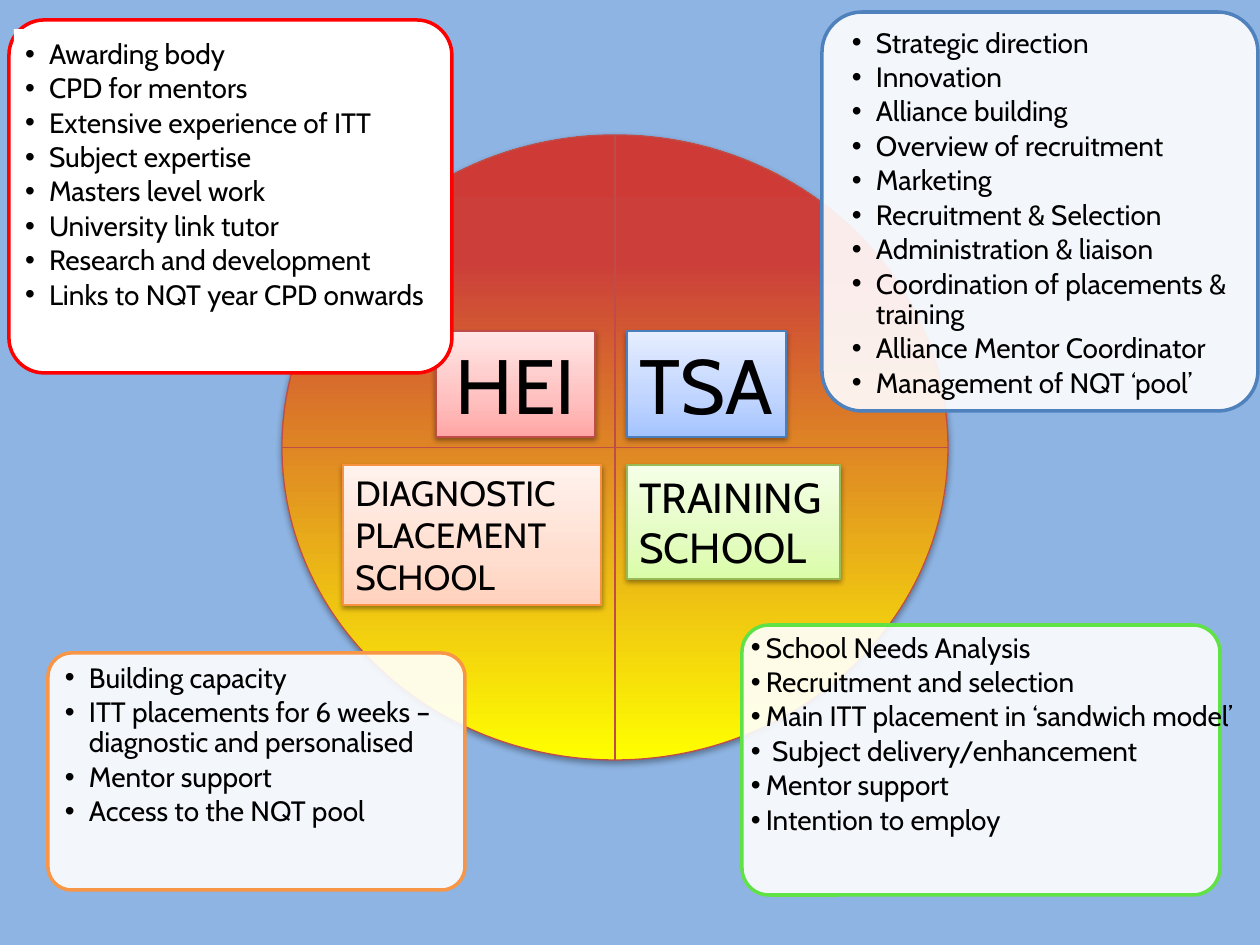
from dataclasses import dataclass

from lxml.etree import SubElement
from pptx import Presentation
from pptx.dml.color import RGBColor
from pptx.enum.shapes import MSO_SHAPE as Shape
from pptx.enum.text import MSO_ANCHOR, MSO_AUTO_SIZE, PP_ALIGN as Align
from pptx.oxml.ns import qn
from pptx.util import Emu, Pt

FONT = "Cabin"
SKY = RGBColor(0x8E, 0xB4, 0xE3)
WHITE = RGBColor(0xFF, 0xFF, 0xFF)
BLACK = RGBColor(0, 0, 0)
RED = RGBColor(0xFF, 0, 0)
BLUE = RGBColor(0x4F, 0x81, 0xBD)
GREEN = RGBColor(0x60, 0xE1, 0x46)
ORANGE = RGBColor(0xF7, 0x96, 0x46)
BRICK = RGBColor(0xBF, 0x4C, 0x48)
BLUE_EDGE = RGBColor(0x4B, 0x7E, 0xBC)
GREEN_EDGE = RGBColor(0x98, 0xB9, 0x55)
ORANGE_EDGE = RGBColor(0xF6, 0x92, 0x40)

# Gradient stops run from bottom to top
SUNSET = ((0, RGBColor(0xFF, 0xFF, 0)), (80, RGBColor(0xCB, 0x3E, 0x3A)),
          (100, RGBColor(0xCE, 0x3B, 0x37)))


def tint(*colours: str) -> tuple:
    return tuple(zip((0, 35, 100), map(RGBColor.from_string, colours)))


BLUE_TINT = tint("A4C4FF", "BFD4FF", "E6EEFF")
GREEN_TINT = tint("DAFDA7", "E4FCC2", "F5FFE7")
ORANGE_TINT = tint("FFD2BD", "FFDED0", "FFF2ED")
RED_TINT = tint("FFA6A5", "FFC0BF", "FFE7E7")


def px(n: int) -> Emu:
    return Emu(round(n * 914400 / 126))


@dataclass
class Label:
    text: str
    box: tuple
    stops: tuple
    edge: RGBColor
    size: int
    align: Align = Align.LEFT


@dataclass
class Panel:
    frame: tuple
    edge: RGBColor
    text_box: tuple
    items: tuple
    inset: int = 9
    indent: int = 24
    opacity: int = 90
    backing: bool = False


LABELS = (
    Label("TSA", (627, 331, 159, 106), BLUE_TINT, BLUE_EDGE, 44, Align.CENTER),
    Label("TRAINING SCHOOL", (627, 465, 213, 114), GREEN_TINT, GREEN_EDGE, 24),
    Label("DIAGNOSTIC PLACEMENT SCHOOL", (343, 465, 258, 140),
          ORANGE_TINT, ORANGE_EDGE, 20),
    Label("HEI", (436, 331, 159, 106), RED_TINT, BRICK, 44, Align.CENTER),
)

PANELS = (
    Panel((822, 12, 436, 399), BLUE, (843, 20, 406, 402), (
        "Strategic direction", "Innovation", "Alliance building",
        "Overview of recruitment", "Marketing", "Recruitment & Selection",
        "Administration & liaison", "Coordination of placements & training",
        "Alliance Mentor Coordinator", "Management of NQT ‘pool’")),
    Panel((742, 625, 478, 270), GREEN, (742, 625, 507, 263), (
        "School Needs Analysis", "Recruitment and selection",
        "Main ITT placement in ‘sandwich model’",
        " Subject delivery/enhancement", "Mentor support",
        "Intention to employ"), indent=15),
    Panel((48, 653, 417, 237), ORANGE, (54, 653, 391, 232), (
        "Building capacity",
        "ITT placements for 6 weeks – diagnostic and personalised",
        "Mentor support", "Access to the NQT pool"), inset=11),
    Panel((9, 20, 443, 353), RED, (14, 29, 423, 323), (
        "Awarding body", "CPD for mentors", "Extensive experience of ITT",
        "Subject expertise", "Masters level work", "University link tutor",
        "Research and development", "Links to NQT year CPD onwards"),
        inset=11, opacity=100, backing=True),
)


def add_shape(slide, kind: Shape, box: tuple, edge: RGBColor, width: float):
    sp = slide.shapes.add_shape(kind, *map(px, box))
    sp.shadow.inherit = False
    sp.line.color.rgb = edge
    sp.line.width = Pt(width)
    return sp


def fill_gradient(sp, stops: tuple) -> None:
    sp.fill.gradient()
    sp.fill.gradient_angle = 90
    gs_lst = sp._element.spPr.find(".//" + qn("a:gsLst"))
    for gs in list(gs_lst):
        gs_lst.remove(gs)
    for pos, colour in stops:
        gs = SubElement(gs_lst, qn("a:gs"), pos=str(pos * 1000))
        SubElement(gs, qn("a:srgbClr"), val=str(colour))


def add_shadow(sp, dist: int, alpha: int) -> None:
    effects = sp._element.spPr.find(qn("a:effectLst"))
    shadow = SubElement(effects, qn("a:outerShdw"), blurRad="40000",
                        dist=str(dist), dir="5400000", rotWithShape="0")
    colour = SubElement(shadow, qn("a:srgbClr"), val=str(BLACK))
    SubElement(colour, qn("a:alpha"), val=str(alpha * 1000))


def add_bullet(p, indent: int) -> None:
    pPr = p._p.get_or_add_pPr()
    pPr.set("marL", str(px(indent)))
    pPr.set("indent", str(-px(indent)))
    SubElement(pPr, qn("a:buFont"), typeface="Arial")
    SubElement(pPr, qn("a:buChar"), char="•")


def write(p, text: str, *, size: int, align: Align = Align.LEFT,
          indent: int = 0) -> None:
    if indent:
        add_bullet(p, indent)
        p.line_spacing = 0.9
        p.space_after = Pt(2.4)
    p.alignment = align
    r = p.add_run()
    r.text = text
    r.font.name = FONT
    r.font.size = Pt(size)
    r.font.color.rgb = BLACK


def draw_label(slide, label: Label) -> None:
    sp = add_shape(slide, Shape.RECTANGLE, label.box, label.edge, 0.75)
    fill_gradient(sp, label.stops)
    add_shadow(sp, 20000, 38)
    tf = sp.text_frame
    tf.word_wrap = True
    tf.auto_size = MSO_AUTO_SIZE.SHAPE_TO_FIT_TEXT
    tf.vertical_anchor = MSO_ANCHOR.TOP
    write(tf.paragraphs[0], label.text, size=label.size, align=label.align)


def draw_panel(slide, panel: Panel) -> None:
    # Rounded frame
    sp = add_shape(slide, Shape.ROUNDED_RECTANGLE, panel.frame, panel.edge, 2)
    sp.adjustments[0] = 0.1
    sp.fill.solid()
    sp.fill.fore_color.rgb = WHITE
    if panel.opacity < 100:
        colour = sp._element.spPr.find(qn("a:solidFill"))[0]
        SubElement(colour, qn("a:alpha"), val=str(panel.opacity * 1000))

    # Bulleted text
    tb = slide.shapes.add_textbox(*map(px, panel.text_box))
    if panel.backing:
        tb.fill.solid()
        tb.fill.fore_color.rgb = WHITE
    tf = tb.text_frame
    tf.word_wrap = True
    tf.margin_left = tf.margin_right = px(panel.inset)
    tf.margin_top = tf.margin_bottom = px(panel.inset)
    for i, item in enumerate(panel.items):
        p = tf.add_paragraph() if i else tf.paragraphs[0]
        write(p, item, size=16, indent=panel.indent)


def main() -> None:
    prs = Presentation()
    prs.slide_width, prs.slide_height = px(1260), px(945)
    slide = prs.slides.add_slide(prs.slide_layouts[6])
    slide.background.fill.solid()
    slide.background.fill.fore_color.rgb = SKY

    # Quartered circle
    circle = add_shape(slide, Shape.FLOWCHART_OR, (282, 135, 666, 625), BRICK, 0.75)
    fill_gradient(circle, SUNSET)
    add_shadow(circle, 23000, 35)

    for label in LABELS:
        draw_label(slide, label)
    for panel in PANELS:
        draw_panel(slide, panel)
    prs.save("out.pptx")


if __name__ == "__main__":
    main()
